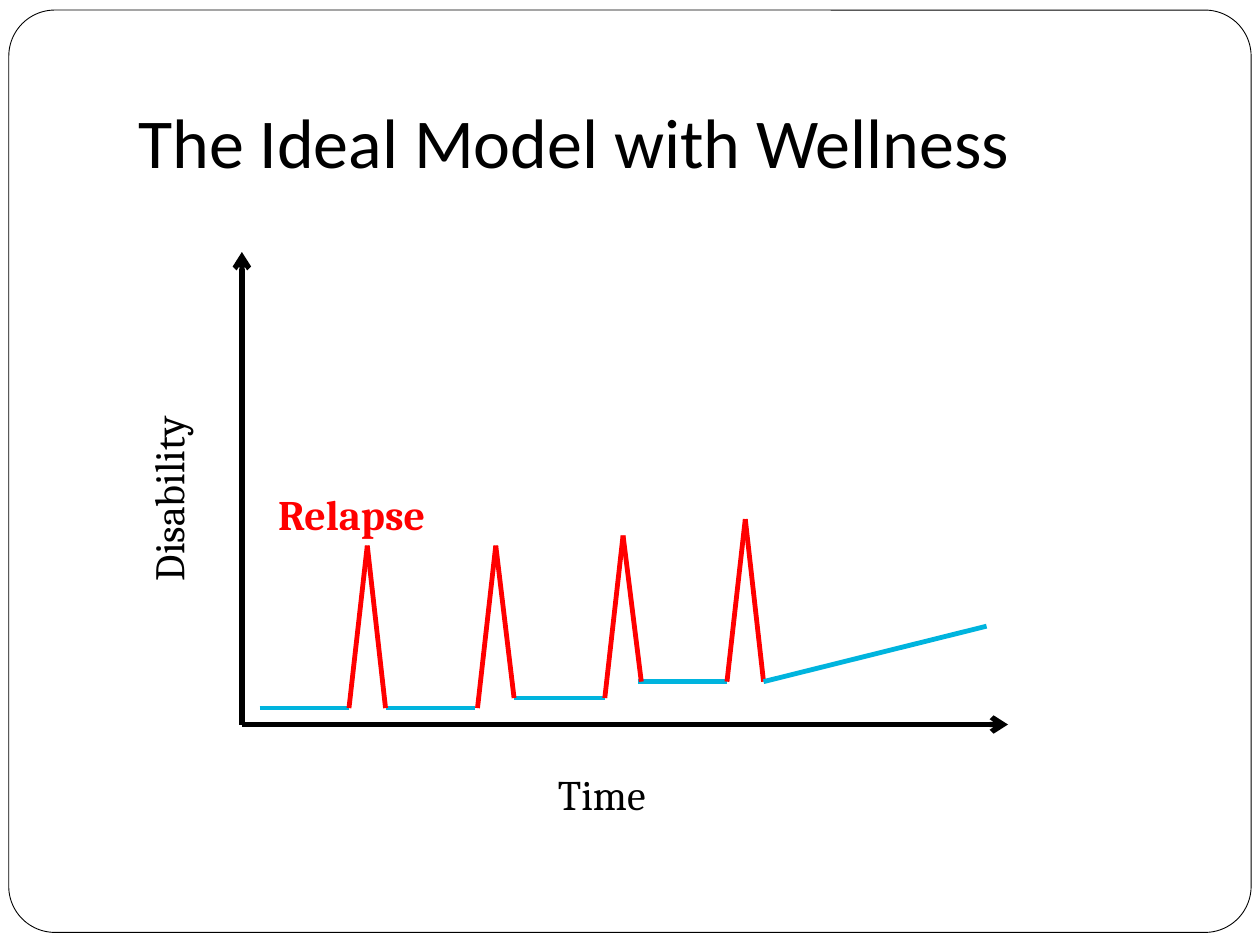
from lxml.etree import SubElement
from pptx import Presentation
from pptx.dml.color import RGBColor
from pptx.enum.shapes import MSO_CONNECTOR, MSO_SHAPE
from pptx.enum.text import MSO_ANCHOR, MSO_AUTO_SIZE
from pptx.oxml.ns import qn
from pptx.util import Inches, Pt

COLS, ROWS = 100, 75
CELL = Inches(10) / COLS
BLACK, WHITE, RED, BLUE = "000000", "FFFFFF", "FF0000", "00B4DE"
ORIGIN, TIME_END, DISABILITY_END = (19.2, 57.5), (80, 57.5), (19.2, 20)
RISE, SPIKE = 1.45, 2.9
PLATEAUS = [(20.6, 27.7, 56.2), (30.6, 37.7, 56.2), (40.8, 48, 55.4), (50.6, 57.7, 54.1)]
RELAPSES = [(27.7, 56.2, 43.3, 56.2), (37.9, 56.2, 43.3, 55.4),
            (48, 55.4, 42.5, 54.1), (57.7, 54.1, 41.2, 54.1)]


def color(value):
    return RGBColor.from_string(value)


def grid(*cells):
    return [round(n * CELL) for n in cells]


def set_all(obj, values):
    for name, value in values.items():
        setattr(obj, name, value)


def add_frame(s):
    sp = s.shapes.add_shape(MSO_SHAPE.ROUNDED_RECTANGLE, *grid(0.7, 0.8, 98.6, 73.2))
    sp.adjustments[0] = 0.05
    sp.shadow.inherit = False
    sp.fill.solid()
    sp.fill.fore_color.rgb = color(WHITE)
    sp.line.color.rgb = color(BLACK)
    sp.line.width = Pt(0.5)


def add_text(s, text, box, frame=None, rotation=0, hue=BLACK, **font):
    sp = s.shapes.add_textbox(*grid(*box))
    sp.rotation = rotation
    tf = sp.text_frame
    set_all(tf, {"word_wrap": False, "auto_size": MSO_AUTO_SIZE.SHAPE_TO_FIT_TEXT} | (frame or {}))
    r = tf.paragraphs[0].add_run()
    r.text = text
    set_all(r.font, {"name": "Cambria", "size": Pt(24)} | font)
    r.font.color.rgb = color(hue)


def add_line(s, start, end, hue, width=2.75, arrow=False):
    sp = s.shapes.add_connector(MSO_CONNECTOR.STRAIGHT, *grid(*start, *end))
    sp.line.color.rgb = color(hue)
    sp.line.width = Pt(width)
    if arrow:
        SubElement(sp.line._get_or_add_ln(), qn("a:tailEnd"), type="arrow")
    SubElement(sp._element.spPr, qn("a:effectLst"))


def add_relapse(s, x, before, peak, after):
    top = (x + RISE, peak)
    add_line(s, (x, before), top, RED)
    add_line(s, (x + SPIKE, after), top, RED)


def main():
    prs = Presentation()
    prs.slide_width, prs.slide_height = grid(COLS, ROWS)
    s = prs.slides.add_slide(prs.slide_layouts[6])
    add_frame(s)
    title_frame = {"word_wrap": True, "auto_size": MSO_AUTO_SIZE.NONE,
                   "vertical_anchor": MSO_ANCHOR.BOTTOM, "margin_bottom": Inches(0.1)}
    add_text(s, "The Ideal Model with Wellness", (10, 3, 85, 12.5), title_frame,
             name="Calibri", size=Pt(40))
    for end in (DISABILITY_END, TIME_END):
        add_line(s, ORIGIN, end, BLACK, 3, arrow=True)
    add_text(s, "Time", (43.3, 60.5, 9.4, 5))
    add_text(s, "Disability", (4.9, 36.2, 16.8, 5), rotation=270)
    add_text(s, "Relapse", (21.1, 38.3, 17.5, 5), {"word_wrap": True}, hue=RED, bold=True)
    for left, right, level in PLATEAUS:
        add_line(s, (left, level), (right, level), BLUE)
    for relapse in RELAPSES:
        add_relapse(s, *relapse)
    add_line(s, (60.6, 54.1), (78.3, 49.7), BLUE)
    prs.save("out.pptx")


if __name__ == "__main__":
    main()
